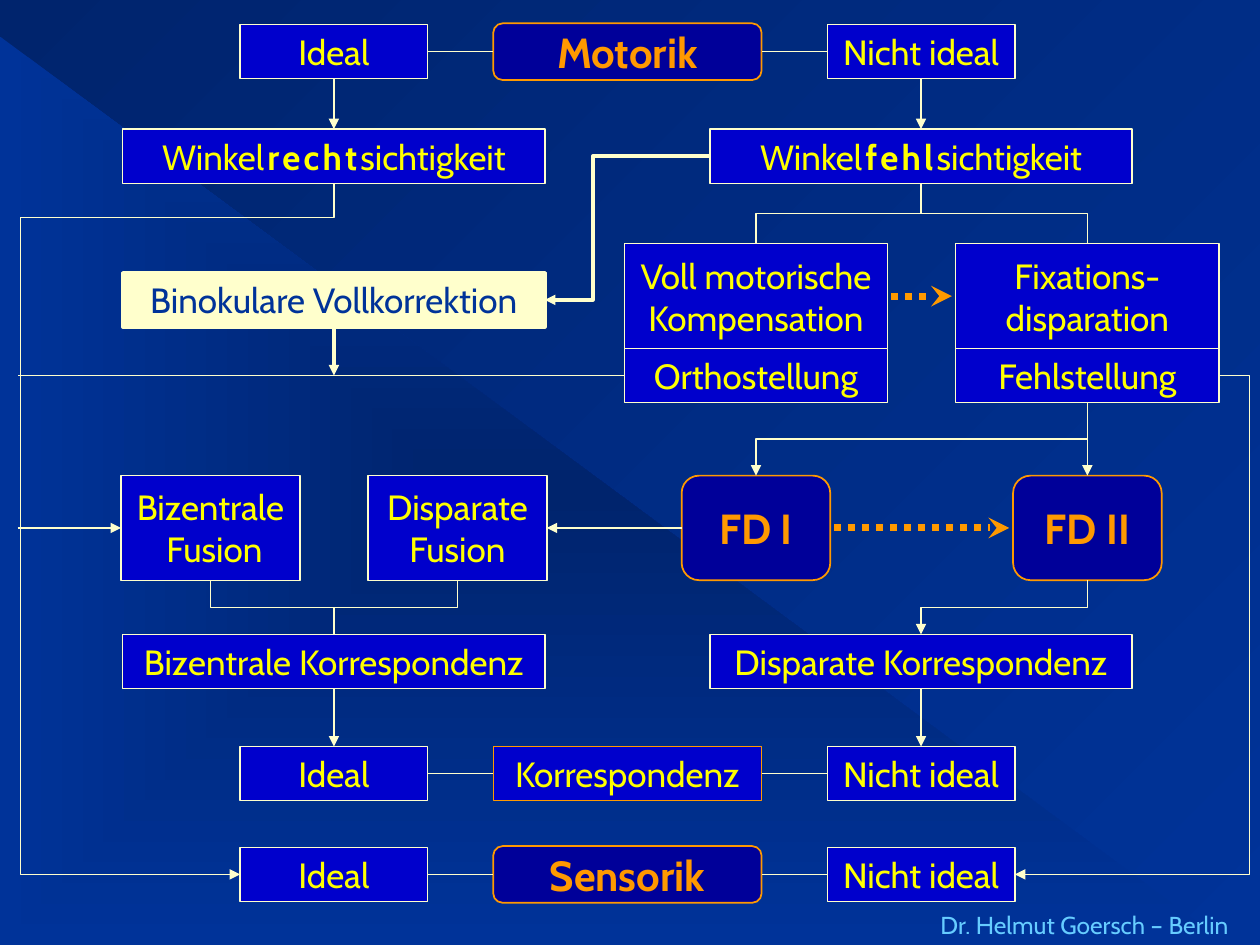
"""Flow chart slide linking motor and sensory findings of binocular vision."""
from pptx import Presentation
from pptx import util as u
from pptx.dml.color import RGBColor
from pptx.enum import dml, shapes, text
from pptx.oxml.ns import qn
from lxml import etree

FONT = "Cabin"
COLORS = {"night": "00246D", "royal": "003399", "navy": "000099", "blue": "0000CC",
          "orange": "FF9900", "cream": "FFFFCC", "yellow": "FFFF00", "sky": "66CCFF"}
COLUMNS = {"biz": 1.67, "left": 2.65, "dis": 3.63, "mid": 4.98, "fd1": 6.0, "right": 7.31, "fd2": 8.63}
ROWS = {"motor": 0.41, "angle": 1.24, "full": 2.38, "state": 2.35, "stand": 2.98,
        "fusion": 4.19, "match": 5.25, "result": 6.14, "sense": 6.94}
RAIL = 0.14
SIZES = {"small": (1.49, 0.43), "wide": (3.35, 0.43), "half": (2.09, 0.43), "tall": (2.09, 0.83),
         "fusion": (1.42, 0.83), "fd": (1.18, 0.83), "head": (2.13, 0.45), "mid": (2.13, 0.43)}
STYLES = {"plain": ("blue", "cream", 0.75, "yellow", 20),
          "middle": ("blue", "orange", 0.75, "yellow", 20),
          "light": ("cream", "cream", 2, "royal", 20),
          "head": ("navy", "orange", 1, "orange", 24)}
BOXES = {
    "motor": ("Motorik", "mid", "motor", "head", "head"),
    "sense": ("Sensorik", "mid", "sense", "head", "head"),
    "match": ("Korrespondenz", "mid", "result", "mid", "middle"),
    "motor_ok": ("Ideal", "left", "motor", "small", "plain"),
    "motor_bad": ("Nicht ideal", "right", "motor", "small", "plain"),
    "match_ok": ("Ideal", "left", "result", "small", "plain"),
    "match_bad": ("Nicht ideal", "right", "result", "small", "plain"),
    "sense_ok": ("Ideal", "left", "sense", "small", "plain"),
    "sense_bad": ("Nicht ideal", "right", "sense", "small", "plain"),
    "straight": (("Winkel", "recht", "sichtigkeit"), "left", "angle", "wide", "plain"),
    "askew": (("Winkel", "fehl", "sichtigkeit"), "right", "angle", "wide", "plain"),
    "full": ("Binokulare Vollkorrektion", "left", "full", "wide", "light"),
    "comp": ("Voll motorische\nKompensation", "fd1", "state", "tall", "plain"),
    "ortho": ("Orthostellung", "fd1", "stand", "half", "plain"),
    "fix": ("Fixations-\ndisparation", "fd2", "state", "tall", "plain"),
    "wrong": ("Fehlstellung", "fd2", "stand", "half", "plain"),
    "biz": ("Bizentrale\n Fusion", "biz", "fusion", "fusion", "plain"),
    "dis": ("Disparate\nFusion", "dis", "fusion", "fusion", "plain"),
    "fd1": ("FD I", "fd1", "fusion", "fd", "head"),
    "fd2": ("FD II", "fd2", "fusion", "fd", "head"),
    "biz_match": ("Bizentrale Korrespondenz", "left", "match", "wide", "plain"),
    "dis_match": ("Disparate Korrespondenz", "right", "match", "wide", "plain"),
}
PLAIN_LINKS = [
    ("motor_ok right", "motor left"), ("motor right", "motor_bad left"),
    ("match_ok right", "match left"), ("match right", "match_bad left"),
    ("sense_ok right", "sense left"), ("sense right", "sense_bad left"),
    ("ortho left", (RAIL, ROWS["stand"])),
]
ARROW_LINKS = [
    ("motor_ok bottom", "straight top"), ("motor_bad bottom", "askew top"),
    ("biz_match bottom", "match_ok top"), ("dis_match bottom", "match_bad top"),
    ("fd1 left", "dis right"), ("wrong bottom", "fd2 top"),
    ((RAIL, ROWS["fusion"]), "biz left"),
]
DOTTED_LINKS = [("comp right", "fix left"), ("fd1 right", "fd2 left")]
ELBOWS = [
    ("askew bottom", "comp top", [0.5], False, 0.75), ("askew bottom", "fix top", [0.5], False, 0.75),
    ("biz bottom", "biz_match top", [0.5], False, 0.75), ("dis bottom", "biz_match top", [0.5], False, 0.75),
    ("wrong bottom", "fd1 top", [0.5], True, 0.75), ("fd2 bottom", "dis_match top", [0.5], True, 0.75),
    ("straight bottom", "sense_ok left", [0.05, 3.34], True, 0.75),
    ("wrong right", "sense_bad right", [-0.15], True, 0.75),
    ("askew left", "full right", [0.71], True, 2),
]


def rgb(name):
    return RGBColor.from_string(COLORS[name])


def shade(fill, angle=None):
    fill.gradient()
    for stop, name in zip(fill.gradient_stops, ("night", "royal")):
        stop.color.rgb = rgb(name)
    if angle is not None:
        fill.gradient_angle = angle


def style(span, size, color, bold=False):
    span.font.name, span.font.size, span.font.bold = FONT, u.Pt(size), bold
    span.font.color.rgb = rgb(color)


def write(frame, words, size, color, bold=False, align=text.PP_ALIGN.CENTER):
    frame.word_wrap = False
    para = frame.paragraphs[0]
    para.alignment = align
    if isinstance(words, str):
        para.text = words
        for span in para.runs:
            style(span, size, color, bold)
        return
    start, stressed, end = words
    parts = [(start, size, False)]
    for letter in stressed:
        parts += [(" ", 8, False), (letter, size, True)]
    parts += [(" ", 8, False), (end, size, False)]
    for part, points, strong in parts:
        span = para.add_run()
        span.text = part
        style(span, points, color, strong)


def add_box(page, words, column, row, size, look):
    width, height = SIZES[size]
    fill, edge, weight, ink, points = STYLES[look]
    kind = shapes.MSO_SHAPE.FLOWCHART_ALTERNATE_PROCESS if look == "head" else shapes.MSO_SHAPE.FLOWCHART_PROCESS
    box = page.shapes.add_shape(kind, u.Inches(COLUMNS[column] - width / 2), u.Inches(ROWS[row] - height / 2),
                                u.Inches(width), u.Inches(height))
    box.shadow.inherit = False
    box.fill.solid()
    box.fill.fore_color.rgb = rgb(fill)
    box.line.color.rgb = rgb(edge)
    box.line.width = u.Pt(weight)
    box.text_frame.vertical_anchor = text.MSO_ANCHOR.MIDDLE
    write(box.text_frame, words, points, ink, look == "head")


def locate(point):
    if not isinstance(point, str):
        return point
    name, side = point.split()
    _, column, row, size, _ = BOXES[name]
    width, height = SIZES[size]
    across, down = {"left": (-1, 0), "right": (1, 0), "top": (0, -1), "bottom": (0, 1)}[side]
    return COLUMNS[column] + across * width / 2, ROWS[row] + down * height / 2


def add_line(page, start, end, arrow=None, color="cream", weight=0.75, dotted=False,
             kind=shapes.MSO_CONNECTOR.STRAIGHT):
    link = page.shapes.add_connector(kind, *(u.Inches(v) for v in (*start, *end)))
    link.line.color.rgb = rgb(color)
    link.line.width = u.Pt(weight)
    if dotted:
        link.line.dash_style = dml.MSO_LINE.ROUND_DOT
    props = link._element.spPr
    if arrow:
        etree.SubElement(props.find(qn("a:ln")), qn("a:tailEnd"), type=arrow)
    etree.SubElement(props, qn("a:effectLst"))
    return props


def add_elbow(page, source, target, bends, arrow, weight):
    start, end = locate(source), locate(target)
    upright = source.endswith("bottom")
    if upright:
        middle = [(a + b) / 2 for a, b in zip(start, end)]
        half_x, half_y = (end[0] - start[0]) / 2, (end[1] - start[1]) / 2
        start = middle[0] - half_y, middle[1] + half_x
        end = middle[0] + half_y, middle[1] - half_x
    props = add_line(page, start, end, "triangle" if arrow else None, weight=weight,
                     kind=shapes.MSO_CONNECTOR.ELBOW)
    if upright:
        props.find(qn("a:xfrm")).set("rot", str(90 * 60000))
    shape = props.find(qn("a:prstGeom"))
    shape.set("prst", f"bentConnector{len(bends) + 2}")
    guides = shape.find(qn("a:avLst"))
    if guides is None:
        guides = etree.SubElement(shape, qn("a:avLst"))
    for number, bend in enumerate(bends, 1):
        etree.SubElement(guides, qn("a:gd"), name=f"adj{number}", fmla=f"val {round(bend * 100000)}")


def add_backdrop(page):
    shade(page.background.fill, 315)
    wedge = page.shapes.add_shape(shapes.MSO_SHAPE.RIGHT_TRIANGLE, 0, u.Inches(0.29), u.Inches(9.75), u.Inches(7.21))
    wedge.shadow.inherit = False
    wedge.line.fill.background()
    shade(wedge.fill)
    gradient = wedge._element.spPr.find(qn("a:gradFill"))
    spread = etree.Element(qn("a:path"), path="shape")
    etree.SubElement(spread, qn("a:fillToRect"), l="50000", t="50000", r="50000", b="50000")
    gradient.replace(gradient.find(qn("a:lin")), spread)


def main():
    deck = Presentation()
    deck.slide_width, deck.slide_height = u.Inches(10), u.Inches(7.5)
    page = deck.slides.add_slide(deck.slide_layouts[6])
    add_backdrop(page)
    for box in BOXES.values():
        add_box(page, *box)
    for links, arrow in ((PLAIN_LINKS, None), (ARROW_LINKS, "triangle")):
        for source, target in links:
            add_line(page, locate(source), locate(target), arrow)
    for source, target in DOTTED_LINKS:
        (left, top), (right, _) = locate(source), locate(target)
        add_line(page, (left + 0.03, top), (right - 0.03, top), "stealth", "orange", 4, True)
    for elbow in ELBOWS:
        add_elbow(page, *elbow)
    add_line(page, locate("full bottom"), (COLUMNS["left"], ROWS["stand"]), "triangle", weight=2)
    credit = page.shapes.add_textbox(u.Inches(5.58), u.Inches(7.17), u.Inches(4.27), u.Inches(0.25))
    write(credit.text_frame, "Dr. Helmut Goersch – Berlin", 14, "sky", align=text.PP_ALIGN.RIGHT)
    deck.save("out.pptx")


if __name__ == "__main__":
    main()
